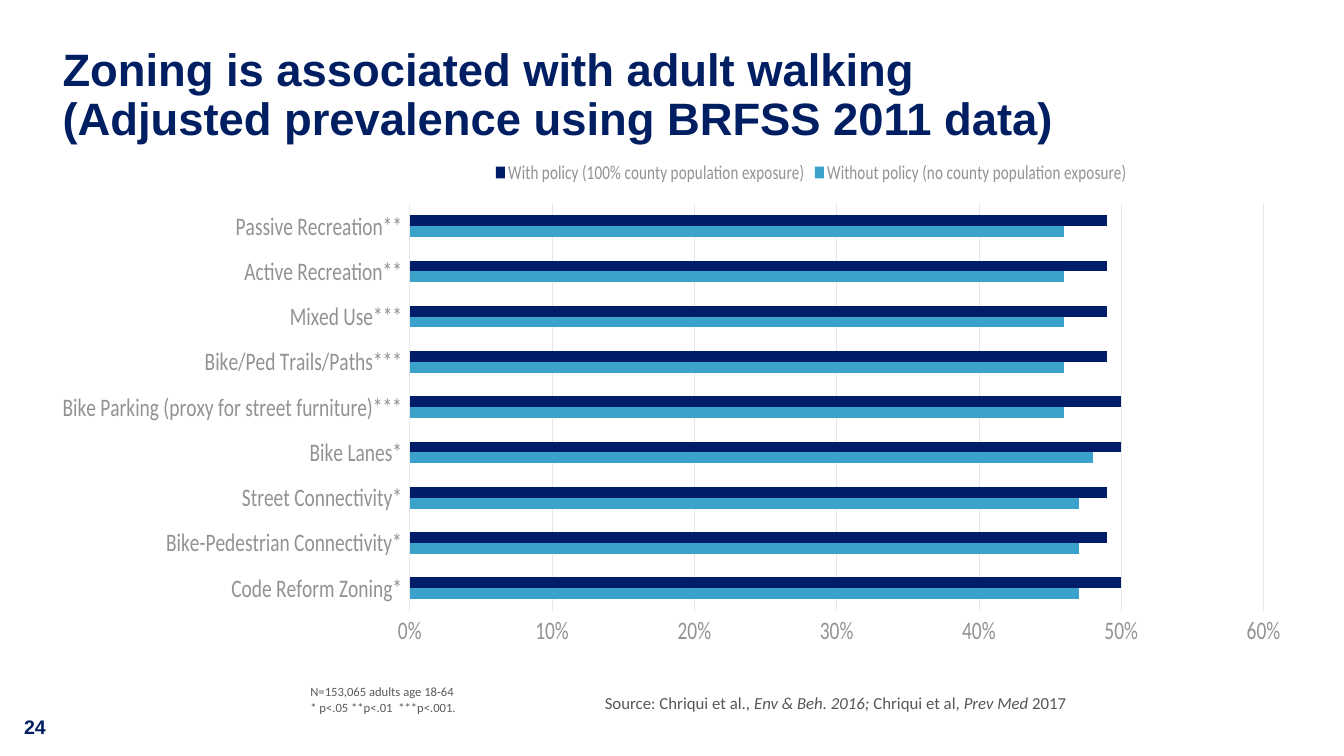
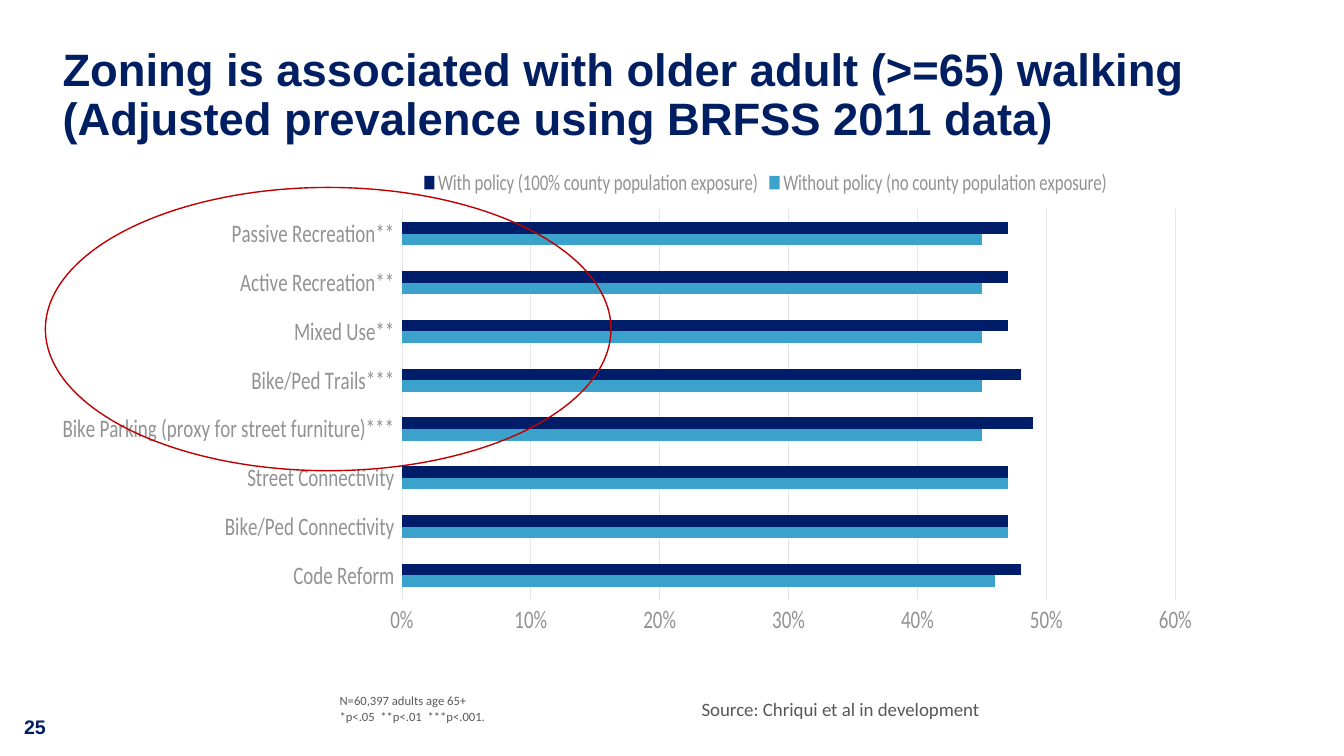
from lxml.etree import SubElement
from pptx import Presentation
from pptx.chart.data import CategoryChartData
from pptx.dml.color import RGBColor
from pptx.enum.chart import XL_CHART_TYPE, XL_LEGEND_POSITION, XL_TICK_LABEL_POSITION, XL_TICK_MARK
from pptx.enum.shapes import MSO_SHAPE
from pptx.enum.text import MSO_ANCHOR, MSO_AUTO_SIZE, PP_ALIGN
from pptx.oxml.ns import qn
from pptx.util import Inches, Pt

NAVY, GRAY, SOFT, RULE, RED = "001E62", "575757", "929292", "E6E6E6", "C00000"
SERIES = [
    ("Without policy (no county population exposure)", "3AA2CB"),
    ("With policy (100% county population exposure)", "001D69"),
]
PLOT = {"x": 0.072, "y": 0.101, "w": 0.91, "h": 0.757}
TITLE = (0.62, 0.47, 12.08, 0.89)
NUMBER = (0.14, 7.04, 0.66, 0.34)

SLIDES = [
    {
        "number": "24",
        "title": "Zoning is associated with adult walking \v(Adjusted prevalence using BRFSS 2011 data)",
        "chart": (0.62, 1.48, 12.08, 5.34),
        "legend": 14,
        "scale": {"maximum_scale": 0.6},
        "rows": [
            ("Code Reform Zoning*", 0.47, 0.5),
            ("Bike-Pedestrian Connectivity*", 0.47, 0.49),
            ("Street Connectivity*", 0.47, 0.49),
            ("Bike Lanes*", 0.48, 0.5),
            ("Bike Parking (proxy for street furniture)***", 0.46, 0.5),
            ("Bike/Ped Trails/Paths***", 0.46, 0.49),
            ("Mixed Use***", 0.46, 0.49),
            ("Active Recreation**", 0.46, 0.49),
            ("Passive Recreation**", 0.46, 0.49),
        ],
        "note": ["N=153,065 adults age 18-64", "* p<.05 **p<.01  ***p<.001."],
        "note_at": (2.98, 6.74, 3.66, 0.4),
        "source": [
            ("Source: Chriqui et al., ", False),
            ("Env & Beh. 2016; ", True),
            ("Chriqui et al, ", False),
            ("Prev Med", True),
            (" 2017", False),
        ],
        "source_at": (5.9, 6.82, 4.83, 0.3),
        "source_size": 12,
    },
    {
        "number": "25",
        "title": "Zoning is associated with older adult (>=65) walking \v(Adjusted prevalence using BRFSS 2011 data)",
        "chart": (0.62, 1.56, 11.2, 5.12),
        "legend": 16,
        "scale": {"minimum_scale": 0, "maximum_scale": 0.6, "major_unit": 0.1},
        "rows": [
            ("Code Reform", 0.46, 0.48),
            ("Bike/Ped Connectivity", 0.47, 0.47),
            ("Street Connectivity", 0.47, 0.47),
            ("Bike Parking (proxy for street furniture)***", 0.45, 0.49),
            ("Bike/Ped Trails***", 0.45, 0.48),
            ("Mixed Use**", 0.45, 0.47),
            ("Active Recreation**", 0.45, 0.47),
            ("Passive Recreation**", 0.45, 0.47),
        ],
        "note": ["N=60,397 adults age 65+", "*p<.05  **p<.01  ***p<.001."],
        "note_at": (3.27, 6.83, 3.24, 0.4),
        "source": [("Source: Chriqui et al in development", False)],
        "source_at": (6.86, 6.87, 3, 0.33),
        "source_size": 13.5,
        "ring": (0.45, 1.86, 5.61, 2.81),
    },
]


def rgb(code):
    return RGBColor.from_string(code)


def box(at):
    return [Inches(side) for side in at]


def style(font, size, color, face="Calibri", bold=False, italic=False):
    font.size, font.name = Pt(size), face
    font.bold, font.italic = bold, italic
    font.color.rgb = rgb(color)


def add_text(slide, at, paras, wrap=True, **look):
    frame = slide.shapes.add_textbox(*box(at)).text_frame
    frame.word_wrap = wrap
    for index, runs in enumerate(paras):
        para = frame.add_paragraph() if index else frame.paragraphs[0]
        for text, italic in runs:
            run = para.add_run()
            run.text = text
            style(run.font, italic=italic, **look)


def add_title(slide, text):
    title = slide.shapes.title
    title.left, title.top, title.width, title.height = box(TITLE)
    frame = title.text_frame
    frame.text = text
    frame.word_wrap = True
    frame.auto_size = MSO_AUTO_SIZE.NONE
    frame.vertical_anchor = MSO_ANCHOR.TOP
    frame.margin_left = frame.margin_top = frame.margin_right = frame.margin_bottom = 0
    para = frame.paragraphs[0]
    para.alignment, para.line_spacing = PP_ALIGN.LEFT, 0.9
    for run in para.runs:
        style(run.font, 32.4, NAVY, "Arial", bold=True)


def set_plot(chart):
    area = chart.element.find(".//" + qn("c:plotArea"))
    layout = area.find(qn("c:layout"))
    if layout is None:
        layout = SubElement(area, qn("c:layout"))
        area.insert(0, layout)
    manual = SubElement(layout, qn("c:manualLayout"))
    modes = {"layoutTarget": "inner", "xMode": "edge", "yMode": "edge"}
    for key, value in {**modes, **PLOT}.items():
        SubElement(manual, qn("c:" + key)).set("val", str(value))


def set_rule(line):
    line.color.rgb = rgb(RULE)
    line.width = Pt(0.75)


def add_bars(slide, item):
    names, *columns = zip(*item["rows"])
    data = CategoryChartData(number_format="0%")
    data.categories = names
    for (name, _), values in zip(SERIES, columns):
        data.add_series(name, values)
    chart = slide.shapes.add_chart(XL_CHART_TYPE.BAR_CLUSTERED, *box(item["chart"]), data).chart
    style(chart.font, 10, GRAY)
    chart.has_title = False
    chart.has_legend = True
    chart.legend.position = XL_LEGEND_POSITION.TOP
    chart.legend.include_in_layout = False
    style(chart.legend.font, item["legend"], SOFT)

    plot = chart.plots[0]
    plot.gap_width, plot.overlap, plot.vary_by_categories = 219, 0, False
    for series, (_, color) in zip(plot.series, SERIES):
        series.format.fill.solid()
        series.format.fill.fore_color.rgb = rgb(color)
        series.invert_if_negative = False

    cat, val = chart.category_axis, chart.value_axis
    for axis in (cat, val):
        axis.major_tick_mark = axis.minor_tick_mark = XL_TICK_MARK.NONE
        style(axis.tick_labels.font, 18, SOFT)
    cat.tick_label_position = XL_TICK_LABEL_POSITION.LOW
    cat.has_major_gridlines = False
    set_rule(cat.format.line)
    val.format.line.fill.background()
    val.has_major_gridlines = True
    set_rule(val.major_gridlines.format.line)
    val.tick_labels.number_format = "0%"
    val.tick_labels.number_format_is_linked = False
    for key, value in item["scale"].items():
        setattr(val, key, value)
    set_plot(chart)


def add_ring(slide, at):
    ring = slide.shapes.add_shape(MSO_SHAPE.OVAL, *box(at))
    ring.shadow.inherit = False
    ring.fill.background()
    ring.line.color.rgb = rgb(RED)
    ring.line.width = Pt(1)


def build(deck, item):
    slide = deck.slides.add_slide(deck.slide_layouts[5])
    add_title(slide, item["title"])
    add_text(slide, NUMBER, [[(item["number"], False)]], size=14, color=NAVY, face="Arial", bold=True)
    add_bars(slide, item)
    add_text(slide, item["note_at"], [[(line, False)] for line in item["note"]], size=9, color="595959")
    if "ring" in item:
        add_ring(slide, item["ring"])
    add_text(slide, item["source_at"], [item["source"]], wrap=False, size=item["source_size"], color=GRAY)


def main():
    deck = Presentation()
    deck.slide_width, deck.slide_height = Inches(13.33), Inches(7.5)
    for item in SLIDES:
        build(deck, item)
    deck.save("out.pptx")


if __name__ == "__main__":
    main()
